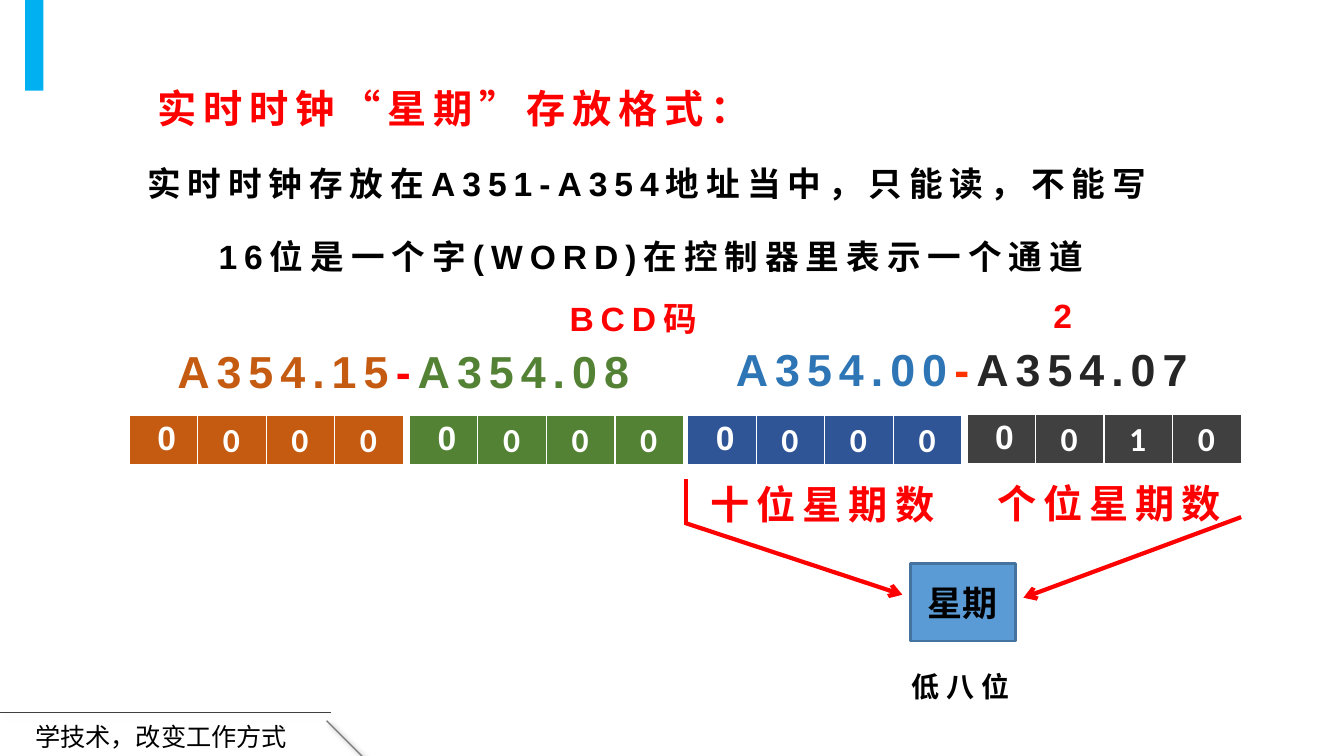
from dataclasses import dataclass

from lxml.etree import SubElement
from pptx import Presentation
from pptx.dml.color import RGBColor
from pptx.enum.shapes import MSO_CONNECTOR, MSO_SHAPE
from pptx.enum.text import MSO_ANCHOR, MSO_AUTO_SIZE, PP_ALIGN
from pptx.oxml.ns import qn
from pptx.util import Inches, Pt

RED, BLACK, WHITE = "FF0000", "000000", "FFFFFF"
ORANGE, GREEN, BLUE, GRAY = "C55A11", "548235", "2F5597", "404040"
CJK = "Noto Sans CJK SC"
BIT_WIDTH = 0.68


@dataclass
class Piece:
    text: str
    color: str


@dataclass
class Label:
    box: tuple[float, float, float, float]
    pieces: list[Piece]
    size: float
    wrap: bool = False
    line_spacing: float = 1.0
    font: str = "Arial"
    bold: bool = True
    spacing: float = 5


@dataclass
class Nibble:
    left: float
    top: float
    bits: str
    color: str


@dataclass
class Stroke:
    start: tuple[float, float]
    end: tuple[float, float]
    color: str = RED
    width: float = 3
    arrow: bool = False
    shadow: bool = False


def rgb(value: str) -> RGBColor:
    return RGBColor.from_string(value)


def add_run(paragraph, piece: Piece, size: float, font: str, bold: bool = True,
            spacing: float = 0) -> None:
    run = paragraph.add_run()
    run.text = piece.text
    run.font.size, run.font.bold, run.font.name = Pt(size), bold, font
    run.font.color.rgb = rgb(piece.color)
    properties = run.font._element
    if spacing:
        properties.set("spc", str(int(spacing * 100)))
    east_asian = SubElement(properties, qn("a:ea"), typeface=CJK)
    properties.find(qn("a:latin")).addnext(east_asian)


def write_label(shape, label: Label) -> None:
    shape.left, shape.top, shape.width, shape.height = map(Inches, label.box)
    frame = shape.text_frame
    frame.word_wrap = label.wrap
    frame.auto_size = MSO_AUTO_SIZE.SHAPE_TO_FIT_TEXT
    frame.vertical_anchor = MSO_ANCHOR.TOP
    paragraph = frame.paragraphs[0]
    paragraph.alignment = PP_ALIGN.LEFT
    paragraph.line_spacing = label.line_spacing
    for piece in label.pieces:
        add_run(paragraph, piece, label.size, label.font, label.bold, label.spacing)


def add_label(slide, label: Label) -> None:
    write_label(slide.shapes.add_textbox(*map(Inches, label.box)), label)


def add_block(slide, box: tuple[float, float, float, float], fill: str):
    block = slide.shapes.add_shape(MSO_SHAPE.RECTANGLE, *map(Inches, box))
    block.shadow.inherit = False
    block.fill.solid()
    block.fill.fore_color.rgb = rgb(fill)
    block.line.fill.background()
    return block


def add_stroke(slide, stroke: Stroke) -> None:
    points = map(Inches, stroke.start + stroke.end)
    connector = slide.shapes.add_connector(MSO_CONNECTOR.STRAIGHT, *points)
    connector.line.color.rgb = rgb(stroke.color)
    connector.line.width = Pt(stroke.width)
    if stroke.arrow:
        SubElement(connector.line._get_or_add_ln(), qn("a:tailEnd"), type="arrow")
    effects = SubElement(connector._element.spPr, qn("a:effectLst"))
    if stroke.shadow:
        cast = SubElement(effects, qn("a:outerShdw"), blurRad=str(Pt(4)),
                          dist=str(Pt(3)), dir="2700000", algn="tl", rotWithShape="0")
        tint = SubElement(cast, qn("a:srgbClr"), val=BLACK)
        SubElement(tint, qn("a:alpha"), val="40000")


def add_border(cell, side: str, width: float) -> None:
    border = SubElement(cell._tc.get_or_add_tcPr(), qn(f"a:ln{side}"), w=str(Pt(width)))
    SubElement(SubElement(border, qn("a:solidFill")), qn("a:srgbClr"), val=WHITE)


def add_nibble(slide, nibble: Nibble) -> None:
    count = len(nibble.bits)
    table = slide.shapes.add_table(
        1, count, Inches(nibble.left), Inches(nibble.top),
        Inches(BIT_WIDTH * count), Inches(0.5)).table
    table.first_row = table.horz_banding = False
    for index, bit in enumerate(nibble.bits):
        cell = table.cell(0, index)
        for side, width in zip("LRTB", (1, 1, 1, 3)):
            add_border(cell, side, width)
        cell.fill.solid()
        cell.fill.fore_color.rgb = rgb(nibble.color)
        cell.margin_left = Inches(0.25 if index else 0.28)
        add_run(cell.text_frame.paragraphs[0], Piece(bit, WHITE), 24,
                "Calibri" if index else "Arial")


TITLE = Label((1.46, 0.79, 6.22, 0.57), [Piece("实时时钟“星期”存放格式：", RED)], 28)
FOOTER = Label((0.25, 7.11, 12.16, 0.4), [Piece("学技术，改变工作方式", BLACK)], 18,
               wrap=True, font=CJK, bold=False, spacing=0)
LABELS = [
    Label((1.36, 1.37, 10.59, 0.63),
          [Piece("实时时钟存放在A351-A354地址当中，只能读，不能写", BLACK)], 24, True, 1.5),
    Label((2.07, 2.09, 9.3, 0.71),
          [Piece("16位是一个字(WORD)在控制器里表示一个通道", BLACK)], 24, True, 1.5),
    Label((5.55, 2.91, 1.55, 0.5), [Piece("BCD码", RED)], 24),
    Label((10.35, 2.88, 0.46, 0.5), [Piece("2", RED)], 24),
    Label((1.66, 3.36, 4.79, 0.64),
          [Piece("A354.15", ORANGE), Piece("-", RED), Piece("A354.08", GREEN)], 32),
    Label((7.2, 3.34, 4.79, 0.64),
          [Piece("A354.00", "2E75B6"), Piece("-", "FF3300"), Piece("A354.07", "262626")], 32),
    Label((6.95, 4.72, 2.52, 0.57), [Piece("十位星期数", RED)], 28),
    Label((9.79, 4.71, 2.52, 0.57), [Piece("个位星期数", RED)], 28),
    Label((8.94, 6.43, 1.29, 0.61), [Piece("低八位", BLACK)], 20, True, 1.5),
]
NIBBLES = [
    Nibble(1.28, 4.12, "0000", ORANGE),
    Nibble(4.06, 4.12, "0000", GREEN),
    Nibble(6.82, 4.12, "0000", BLUE),
    Nibble(9.59, 4.11, "0010", GRAY),
]
FOOTER_LINES = [
    Stroke((0, 7.07), (3.28, 7.07), GRAY, 0.25, shadow=True),
    Stroke((3.24, 7.15), (3.6, 7.51), "808080", 1, shadow=True),
]
WEEKDAY_LINES = [
    Stroke((6.8, 4.75), (6.8, 5.21)),
    Stroke((6.8, 5.19), (8.95, 5.9), arrow=True),
    Stroke((12.31, 5.13), (10.15, 5.93), arrow=True),
]


def main() -> None:
    deck = Presentation()
    deck.slide_width, deck.slide_height = Inches(13.33), Inches(7.5)
    slide = deck.slides.add_slide(deck.slide_layouts[5])

    # Frame of the page: footer and accent bar
    for stroke in FOOTER_LINES:
        add_stroke(slide, stroke)
    add_label(slide, FOOTER)
    add_block(slide, (0.25, 0, 0.18, 0.9), "00B0F0")

    # Title, explanations and bit groups
    write_label(slide.shapes.title, TITLE)
    for nibble in NIBBLES:
        add_nibble(slide, nibble)
    for label in LABELS:
        add_label(slide, label)

    # Weekday result and the lines leading to it
    weekday = add_block(slide, (9.03, 5.59, 1.04, 0.77), "5B9BD5")
    weekday.line.color.rgb = rgb("43739E")
    weekday.line.width = Pt(2)
    weekday.text_frame.vertical_anchor = MSO_ANCHOR.MIDDLE
    caption = weekday.text_frame.paragraphs[0]
    caption.alignment = PP_ALIGN.CENTER
    add_run(caption, Piece("星期", BLACK), 25, "Calibri")
    for stroke in WEEKDAY_LINES:
        add_stroke(slide, stroke)

    deck.save("out.pptx")


if __name__ == "__main__":
    main()
